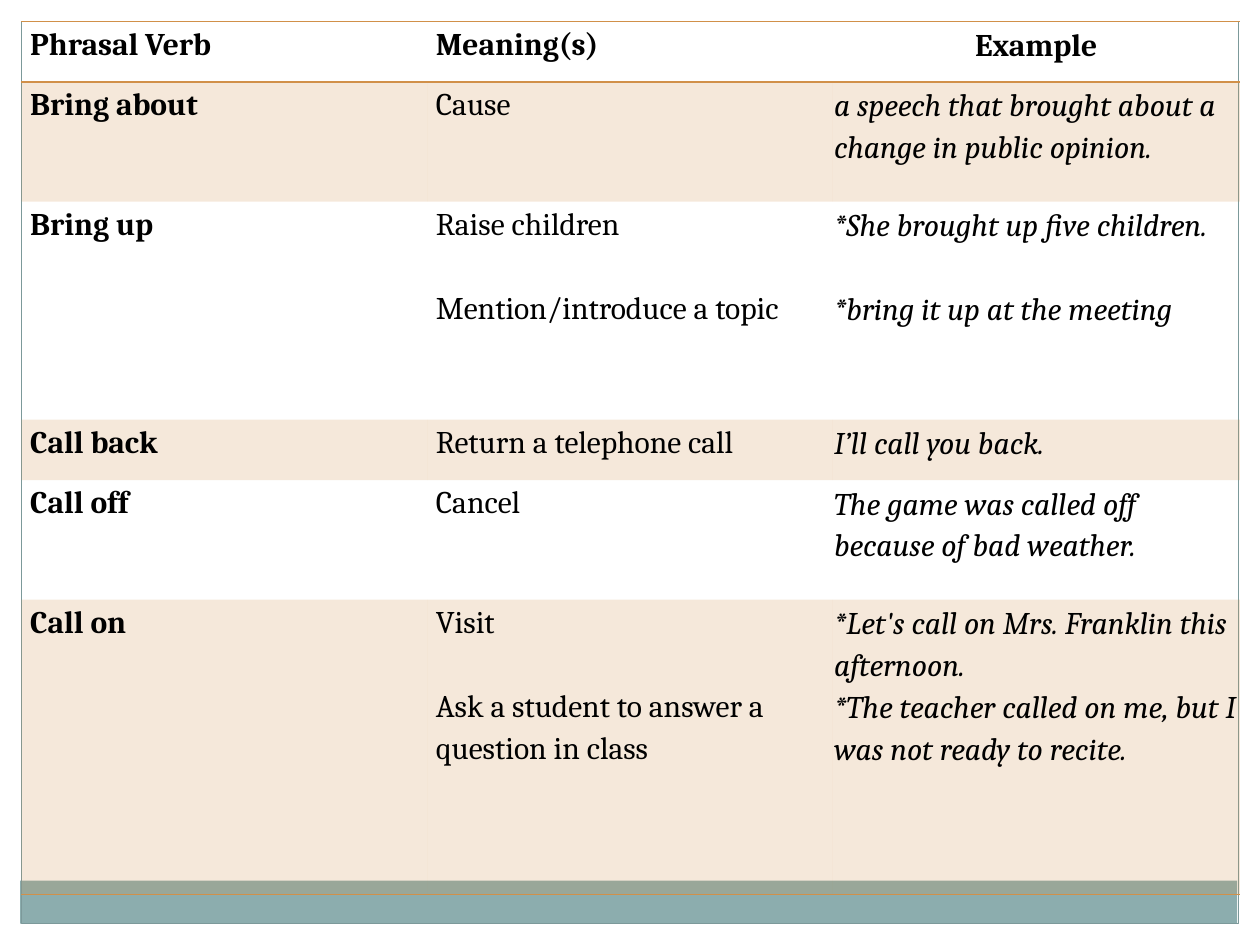
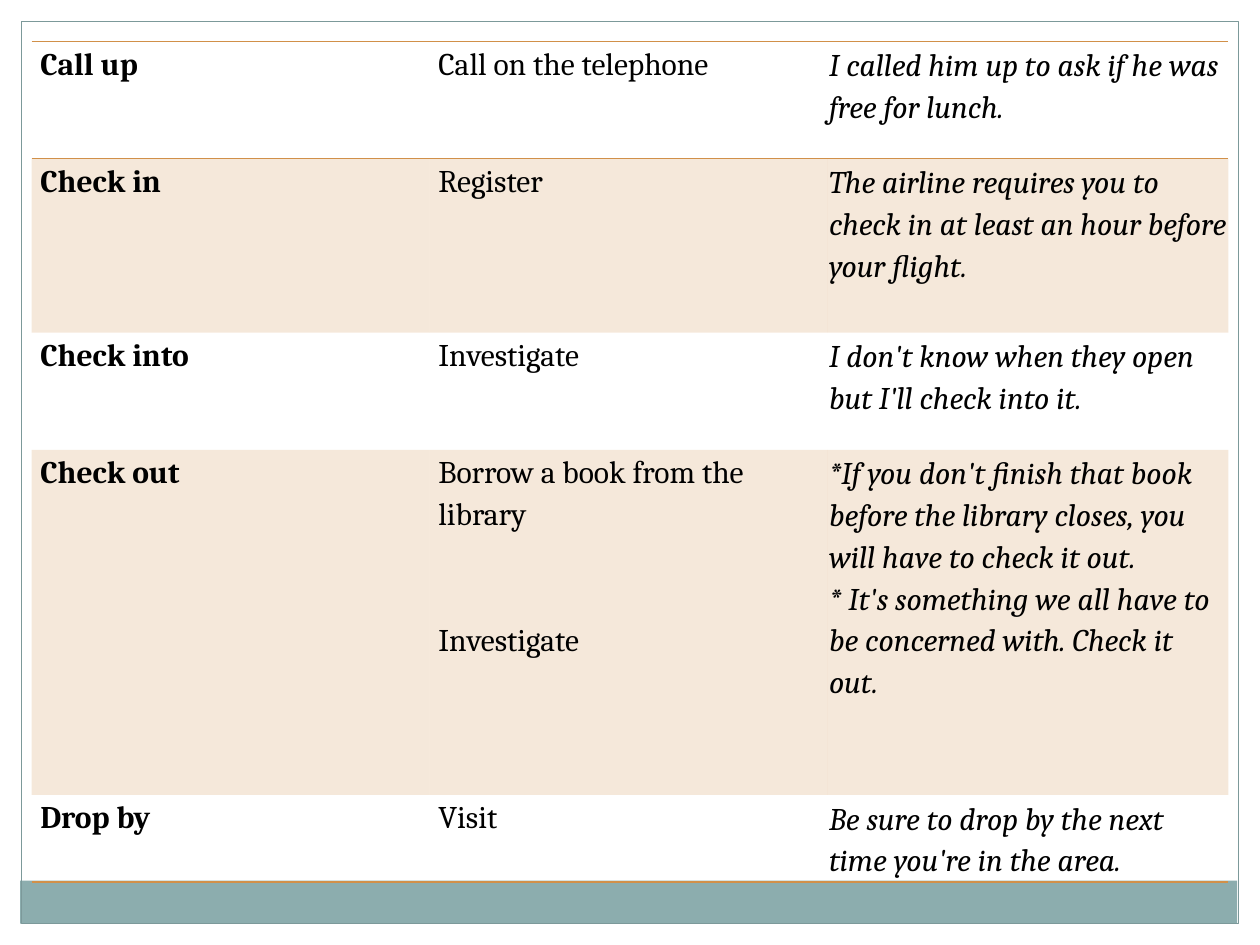
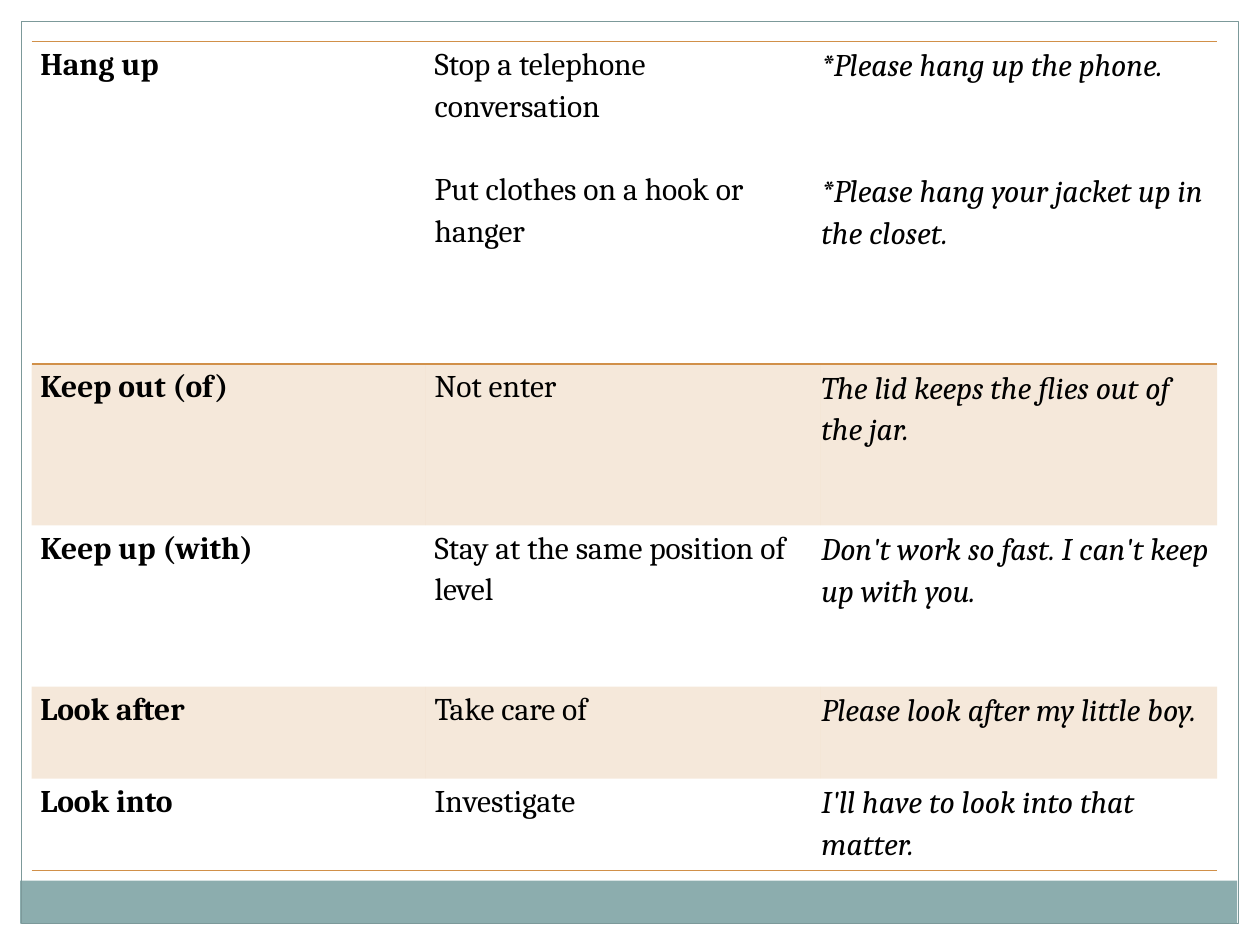
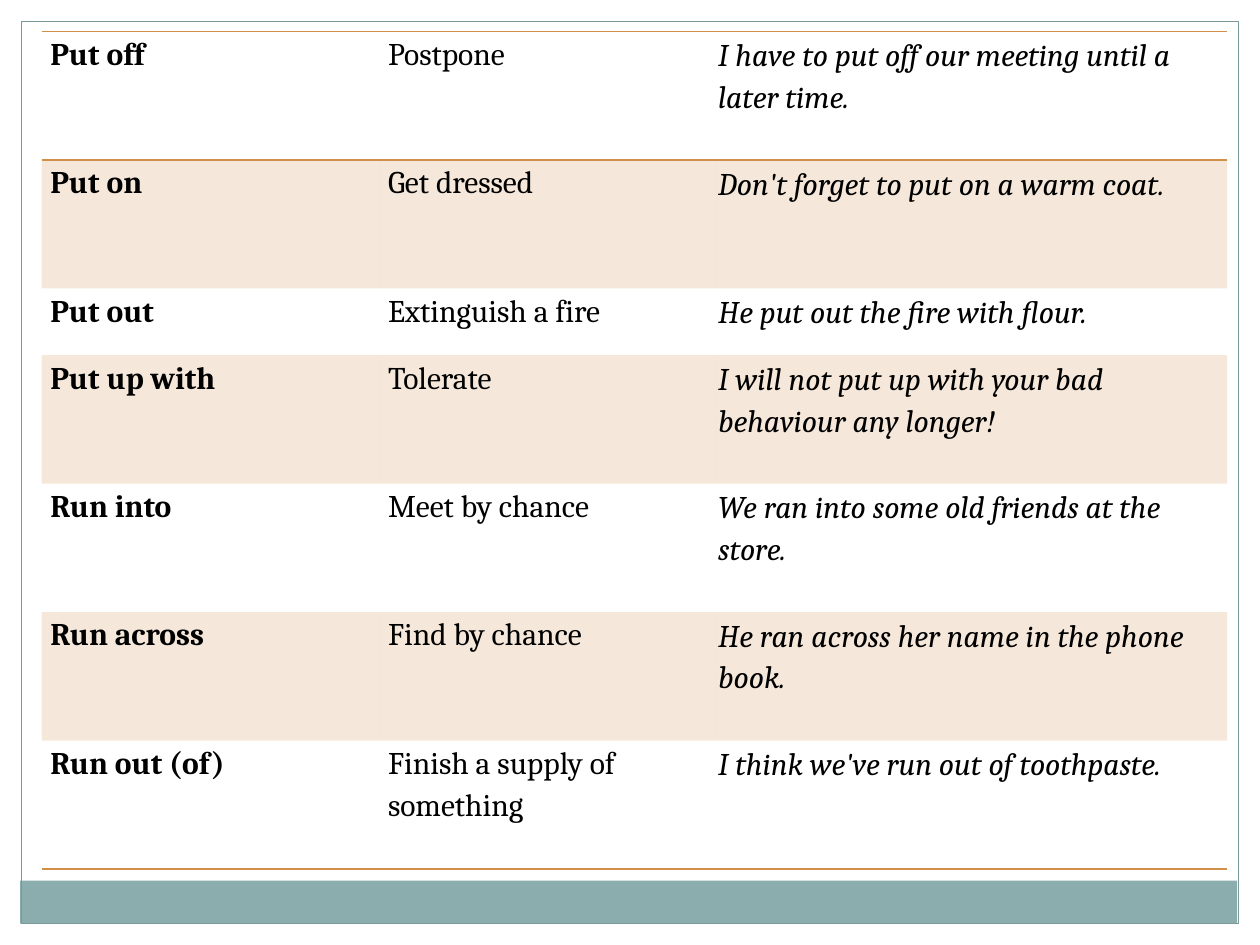
"""Build four slides of phrasal verbs with their meanings and examples."""
from lxml.etree import SubElement
from pptx import Presentation
from pptx.dml.color import RGBColor
from pptx.enum.shapes import MSO_SHAPE as Preset
from pptx.enum.text import PP_ALIGN as Align
from pptx.oxml.ns import qn
from pptx.util import Inches, Pt

WIDTH, HEIGHT, MARGIN = 10, 7.5, 0.17
WHITE, BLACK, TEAL, GREY_TEAL, OCHRE = "FFFFFF", "000000", "8CADAE", "7C999A", "D19049"
FONT, TEXT_SIZE, LINE_SPACING, LINE_PITCH = "Cambria", 18, 1.15, 24
TINT, BORDER = 20, 1
NO_STYLE = "{2D5ABB26-0587-4C30-8999-92F81FD0307C}"
HEADER = ("Phrasal Verb", "Meaning(s)", "Example")

FRAME_PARTS = [
    ((0, 0, WIDTH, MARGIN), WHITE, None),
    ((WIDTH - MARGIN, 0, MARGIN, HEIGHT), WHITE, None),
    ((0, 0, MARGIN, HEIGHT), WHITE, None),
    ((0.16, 6.99, 9.66, 0.34), TEAL, None),
    ((MARGIN, MARGIN, 9.66, 7.16), None, GREY_TEAL),
]

# Each row: height, verb, meanings, examples; a number in a list skips that many lines.
VERB_TABLES = [
    {"corner": (0.17, 0.17), "columns": (3.22, 3.22, 3.23), "rows": [
        (0.48, HEADER[0], [HEADER[1]], [HEADER[2]]),
        (0.95, "Bring about", ["Cause"],
         ["a speech that brought about a change in public opinion."]),
        (1.73, "Bring up", ["Raise children", 1, "Mention/introduce a topic"],
         ["*She brought up five children.", 1, "*bring it up at the meeting"]),
        (0.48, "Call back", ["Return a telephone call"], ["I’ll call you back."]),
        (0.95, "Call off", ["Cancel"], ["The game was called off because of bad weather."]),
        (2.34, "Call on", ["Visit", 1, "Ask a student to answer a question in class"],
         ["*Let's call on Mrs. Franklin this afternoon.",
          "*The teacher called on me, but I was not ready to recite."]),
    ]},
    {"corner": (0.25, 0.33), "columns": (3.16, 3.16, 3.18), "rows": [
        (0.93, "Call up", ["Call on the telephone"],
         ["I called him up to ask if he was free for lunch."]),
        (1.38, "Check in", ["Register"],
         ["The airline requires you to check in at least an hour before your flight."]),
        (0.93, "Check into", ["Investigate"],
         ["I don't know when they open but I'll check into it."]),
        (2.74, "Check out", ["Borrow a book from the library", 2, "Investigate"],
         ["*If you don't finish that book before the library closes, "
          "you will have to check it out.",
          "* It's something we all have to be concerned with. Check it out."]),
        (0.69, "Drop by", ["Visit"],
         ["Be sure to drop by the next time you're in the area."]),
    ]},
    {"corner": (0.25, 0.33), "columns": (3.13, 3.13, 3.15), "rows": [
        (2.56, "Hang up",
         ["Stop a telephone conversation", 1, "Put clothes on a hook or hanger"],
         ["*Please hang up the phone.", 2, "*Please hang your jacket up in the closet."]),
        (1.28, "Keep out (of)", ["Not enter"], ["The lid keeps the flies out of the jar."]),
        (1.28, "Keep up (with)", ["Stay at the same position of level"],
         ["Don't work so fast. I can't keep up with you."]),
        (0.73, "Look after", ["Take care of"], ["Please look after my little boy."]),
        (0.73, "Look into", ["Investigate"], ["I'll have to look into that matter."]),
    ]},
    {"corner": (0.33, 0.25), "columns": (2.68, 2.68, 4.05), "rows": [
        (1.02, "Put off", ["Postpone"],
         ["I have to put off our meeting until a later time."]),
        (1.02, "Put on", ["Get dressed"], ["Don't forget to put on a warm coat."]),
        (0.53, "Put out", ["Extinguish a fire"], ["He put out the fire with flour."]),
        (1.02, "Put up with", ["Tolerate"],
         ["I will not put up with your bad behaviour any longer!"]),
        (1.02, "Run into", ["Meet by chance"],
         ["We ran into some old friends at the store."]),
        (1.02, "Run across", ["Find by chance"],
         ["He ran across her name in the phone book."]),
        (1.02, "Run out (of)", ["Finish a supply of something"],
         ["I think we've run out of toothpaste."]),
    ]},
]


def paint(fill, color):
    if color is None:
        fill.background()
    else:
        fill.solid()
        fill.fore_color.rgb = RGBColor.from_string(color)


def add_frame(master, slide):
    tree = master.element.cSld.spTree
    for position, (box, color, outline) in enumerate(FRAME_PARTS, start=2):
        part = slide.shapes.add_shape(Preset.RECTANGLE, *map(Inches, box))
        part.shadow.inherit = False
        paint(part.fill, color)
        paint(part.line.fill, outline)
        if outline:
            part.line.width = Pt(0.75)
        tree.insert(position, part.element)


def add_border(cell, side):
    edge = SubElement(cell._tc.get_or_add_tcPr(), qn(f"a:ln{side}"), w=str(Pt(BORDER)))
    SubElement(SubElement(edge, qn("a:solidFill")), qn("a:srgbClr"), val=OCHRE)


def tint(cell):
    paint(cell.fill, OCHRE)
    color = cell._tc.tcPr.find(qn("a:solidFill")).find(qn("a:srgbClr"))
    SubElement(color, qn("a:alpha"), val=str(TINT * 1000))


def write(cell, entries, bold, italic, align):
    frame, gap, started = cell.text_frame, 0, False
    for entry in entries:
        if isinstance(entry, int):
            gap = entry
            continue
        paragraph = frame.add_paragraph() if started else frame.paragraphs[0]
        started = True
        paragraph.alignment = align
        paragraph.line_spacing = LINE_SPACING
        paragraph.space_before = Pt(gap * LINE_PITCH)
        gap = 0
        run = paragraph.add_run()
        run.text = entry
        font = run.font
        font.name, font.size, font.bold, font.italic = FONT, Pt(TEXT_SIZE), bold, italic
        font.color.rgb = RGBColor.from_string(BLACK)


def add_verb_table(slide, corner, columns, rows):
    heights = [row[0] for row in rows]
    box = (*corner, sum(columns), sum(heights))
    graphic = slide.shapes.add_table(len(rows), len(columns), *map(Inches, box))
    table = graphic.table
    table.first_row = table.horz_banding = False
    table._tbl.tblPr.find(qn("a:tableStyleId")).text = NO_STYLE
    for column, width in zip(table.columns, columns):
        column.width = Inches(width)
    for r, (height, verb, meanings, examples) in enumerate(rows):
        table.rows[r].height = Inches(height)
        is_header = verb == HEADER[0]
        for c, entries in enumerate(([verb], meanings, examples)):
            cell, is_example = table.cell(r, c), c == 2
            side, end = (0.01, 0.01) if is_example else (0.07, 0)
            cell.margin_left = cell.margin_right = Inches(side)
            cell.margin_top = cell.margin_bottom = Inches(end)
            write(cell, entries, c == 0 or is_header, is_example and not is_header,
                  Align.CENTER if is_example and is_header else Align.LEFT)
            if r == 0:
                add_border(cell, "T")
            if r in (0, len(rows) - 1):
                add_border(cell, "B")
            if r % 2:
                tint(cell)
            else:
                paint(cell.fill, None)


def main():
    deck = Presentation()
    deck.slide_width, deck.slide_height = Inches(WIDTH), Inches(HEIGHT)
    paint(deck.slide_master.background.fill, WHITE)
    blank = deck.slide_layouts[6]
    for number, verbs in enumerate(VERB_TABLES):
        slide = deck.slides.add_slide(blank)
        if number == 0:
            add_frame(deck.slide_master, slide)
        add_verb_table(slide, **verbs)
    deck.save("out.pptx")


if __name__ == "__main__":
    main()
